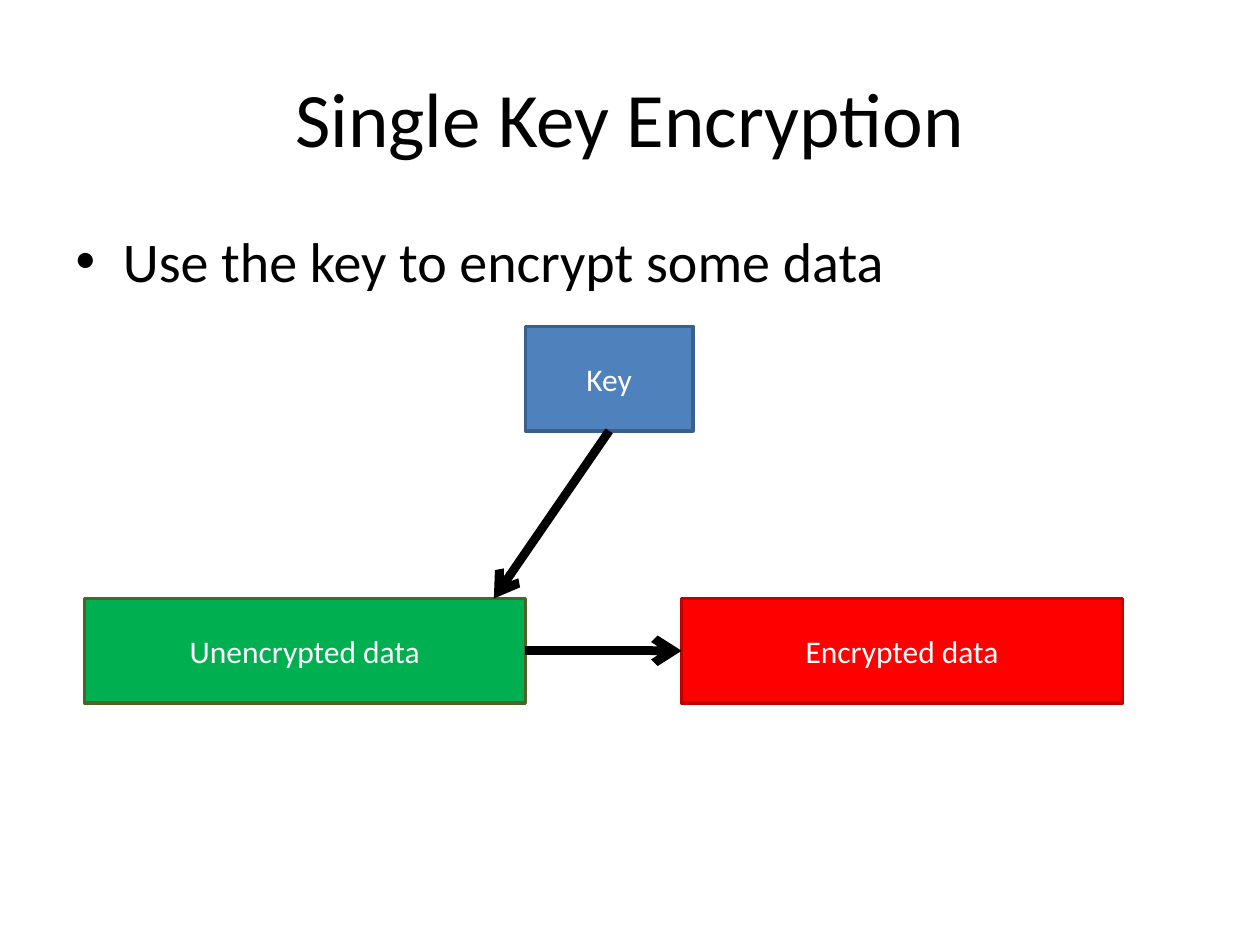
from dataclasses import dataclass
from typing import Optional

from lxml import etree
from pptx import Presentation
from pptx.dml.color import RGBColor
from pptx.enum.shapes import MSO_CONNECTOR, MSO_SHAPE
from pptx.enum.text import MSO_ANCHOR, PP_ALIGN
from pptx.oxml.ns import qn
from pptx.util import Inches, Pt

RECT = MSO_SHAPE.RECTANGLE
LINE = MSO_CONNECTOR.STRAIGHT
CENTER = PP_ALIGN.CENTER
LEFT = PP_ALIGN.LEFT
MIDDLE = MSO_ANCHOR.MIDDLE
TOP = MSO_ANCHOR.TOP

FONT = "Calibri"
COLORS = {
    "black": "000000",
    "white": "FFFFFF",
    "blue": "4F81BD",
    "navy": "3A5F8C",
    "green": "00B050",
    "olive": "4F6228",
    "red": "FF0000",
    "maroon": "C00000",
}
BOX_H = 0.83
DATA_W = 3.5
DATA_Y = 4.75


@dataclass
class Box:
    text: str
    left: float
    top: float
    width: float
    fill: str
    edge: str


@dataclass
class Arrow:
    start: str
    side: int
    tip: tuple[float, float]
    end: Optional[str] = None
    end_side: int = 1


BOXES = [
    Box("Key", 4.17, 2.59, 1.33, "blue", "navy"),
    Box("Unencrypted data", 0.67, DATA_Y, DATA_W, "green", "olive"),
    Box("Encrypted data", 5.41, DATA_Y, DATA_W, "red", "maroon"),
]
ARROWS = [
    Arrow("Key", 2, (3.92, DATA_Y)),
    Arrow("Unencrypted data", 3, (5.41, DATA_Y + BOX_H / 2), "Encrypted data"),
]


def color(name: str) -> RGBColor:
    return RGBColor.from_string(COLORS[name])


def write(shape, text: str, size: int, ink: str, align, anchor) -> None:
    frame = shape.text_frame
    frame.word_wrap = True
    frame.vertical_anchor = anchor
    para = frame.paragraphs[0]
    para.alignment = align
    run = para.add_run()
    run.text = text
    run.font.name = FONT
    run.font.size = Pt(size)
    run.font.color.rgb = color(ink)


def place(shape, left: float, top: float, width: float, height: float) -> None:
    shape.left, shape.top = Inches(left), Inches(top)
    shape.width, shape.height = Inches(width), Inches(height)


def draw_box(slide, box: Box):
    shape = slide.shapes.add_shape(
        RECT, Inches(box.left), Inches(box.top), Inches(box.width), Inches(BOX_H)
    )
    shape.shadow.inherit = False
    shape.fill.solid()
    shape.fill.fore_color.rgb = color(box.fill)
    shape.line.color.rgb = color(box.edge)
    shape.line.width = Pt(2)
    write(shape, box.text, 18, "white", CENTER, MIDDLE)
    return shape


def draw_arrow(slide, arrow: Arrow, shapes: dict) -> None:
    x, y = (Inches(v) for v in arrow.tip)
    line = slide.shapes.add_connector(LINE, x, y, x, y)
    line.begin_connect(shapes[arrow.start], arrow.side)
    if arrow.end:
        line.end_connect(shapes[arrow.end], arrow.end_side)
    line.line.color.rgb = color("black")
    line.line.width = Pt(5)
    props = line.element.spPr
    etree.SubElement(props.find(qn("a:ln")), qn("a:tailEnd"), type="arrow")
    etree.SubElement(props, qn("a:effectLst"))


def main() -> None:
    deck = Presentation()
    deck.slide_width, deck.slide_height = Inches(10), Inches(7.5)
    slide = deck.slides.add_slide(deck.slide_layouts[1])

    # Title and bullet list
    title, body = slide.shapes.title, slide.placeholders[1]
    place(title, 0.5, 0.3, 9, 1.25)
    write(title, "Single Key Encryption", 44, "black", CENTER, MIDDLE)
    place(body, 0.5, 1.75, 9, 4.95)
    write(body, "Use the key to encrypt some data", 32, "black", LEFT, TOP)

    # Diagram
    shapes = {box.text: draw_box(slide, box) for box in BOXES}
    for arrow in ARROWS:
        draw_arrow(slide, arrow, shapes)

    deck.save("out.pptx")


if __name__ == "__main__":
    main()
